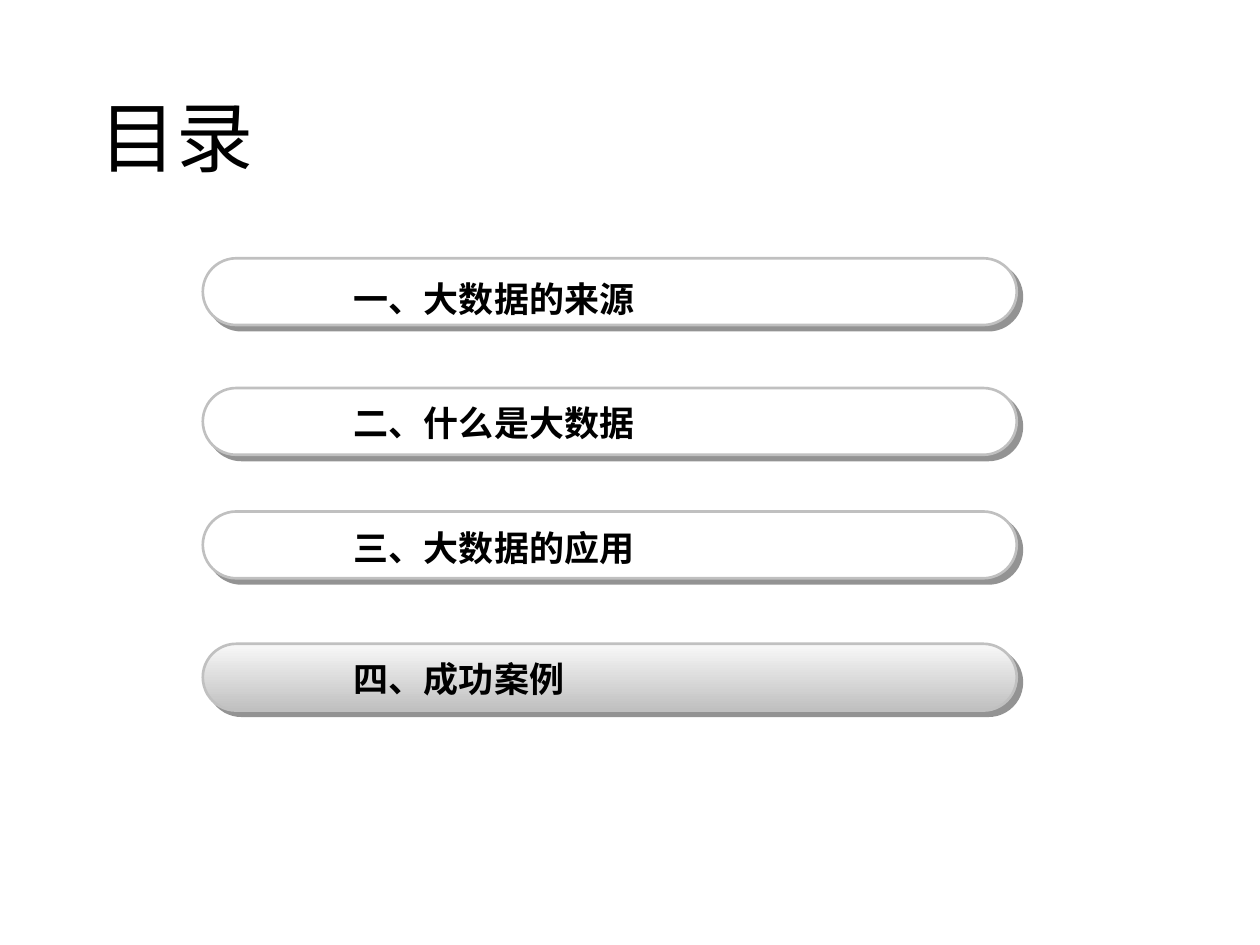
import pptx
import pptx.util
import pptx.dml.color
import pptx.enum.shapes
import pptx.enum.text
import pptx.oxml
import pptx.oxml.ns

Inches = pptx.util.Inches
RGBColor = pptx.dml.color.RGBColor

BLACK = RGBColor(0x00, 0x00, 0x00)
WHITE = RGBColor(0xFF, 0xFF, 0xFF)
SILVER = RGBColor(0xC0, 0xC0, 0xC0)
PALE = RGBColor(0xF8, 0xF8, 0xF8)
SHADOW = RGBColor(0x29, 0x29, 0x29)

SHADOW_XML = (
    f'<a:effectLst {pptx.oxml.ns.nsdecls("a")}>'
    f'<a:outerShdw dist="{pptx.util.Pt(4.2)}" dir="2700000" algn="ctr" rotWithShape="0">'
    f'<a:srgbClr val="{SHADOW}"><a:alpha val="50000"/></a:srgbClr>'
    '</a:outerShdw></a:effectLst>'
)


def write_text(frame, text, *, font, size, color=BLACK, bold=False, spacing=None):
    para = frame.paragraphs[0]
    para.line_spacing = spacing
    span = para.add_run()
    span.text = text
    span.font.name = font
    span.font.size = pptx.util.Pt(size)
    span.font.bold = bold
    span.font.color.rgb = color
    return span


class Agenda:
    """Style and current slide of the contents page."""

    title_font = "Calibri"
    item_font = "Noto Sans CJK SC"

    def __init__(self, page):
        self.page = page

    def title(self, text):
        box = self.page.shapes.title
        box.left, box.top = Inches(0.69), Inches(0.4)
        box.width, box.height = Inches(8.62), Inches(1.45)
        frame = box.text_frame
        frame.vertical_anchor = pptx.enum.text.MSO_ANCHOR.MIDDLE
        write_text(frame, text, font=self.title_font, size=44, spacing=0.9)
        frame.paragraphs[0].alignment = pptx.enum.text.PP_ALIGN.LEFT

    def bar(self, top, current=False):
        bar = self.page.shapes.add_shape(
            pptx.enum.shapes.MSO_SHAPE.ROUNDED_RECTANGLE,
            Inches(1.61), Inches(top), Inches(6.46), Inches(0.53))
        bar.adjustments[0] = 0.5
        if current:
            bar.fill.gradient()
            bar.fill.gradient_angle = 270
            for stop, color in zip(bar.fill.gradient_stops, (PALE, SILVER)):
                stop.color.rgb = color
        else:
            bar.fill.solid()
            bar.fill.fore_color.rgb = WHITE
        bar.line.color.rgb = SILVER
        bar.line.width = pptx.util.Pt(1.5)
        bar._element.spPr.append(pptx.oxml.parse_xml(SHADOW_XML))

    def label(self, text, top, width):
        box = self.page.shapes.add_textbox(
            Inches(2.71), Inches(top), Inches(width), Inches(0.44))
        frame = box.text_frame
        frame.word_wrap = False
        frame.auto_size = pptx.enum.text.MSO_AUTO_SIZE.SHAPE_TO_FIT_TEXT
        span = write_text(frame, text, font=self.item_font, size=20, bold=True)
        # The East Asian face has to be named separately
        face = pptx.oxml.parse_xml(
            f'<a:ea {pptx.oxml.ns.nsdecls("a")} typeface="{self.item_font}"/>')
        span.font._element.append(face)


def main():
    deck = pptx.Presentation()
    deck.slide_width, deck.slide_height = Inches(10), Inches(7.5)
    agenda = Agenda(deck.slides.add_slide(deck.slide_layouts[5]))
    agenda.title("目录")

    # Sections: text, bar top, label top, label width, current section
    sections = [
        ("一、大数据的来源", 2.05, 2.15, 2.45, False),
        ("二、什么是大数据", 3.08, 3.14, 2.45, False),
        ("三、大数据的应用", 4.06, 4.13, 2.45, False),
        ("四、成功案例", 5.11, 5.17, 1.88, True),
    ]
    for text, bar_top, label_top, width, current in sections:
        agenda.bar(bar_top, current)
        agenda.label(text, label_top, width)

    deck.save("out.pptx")


if __name__ == "__main__":
    main()
